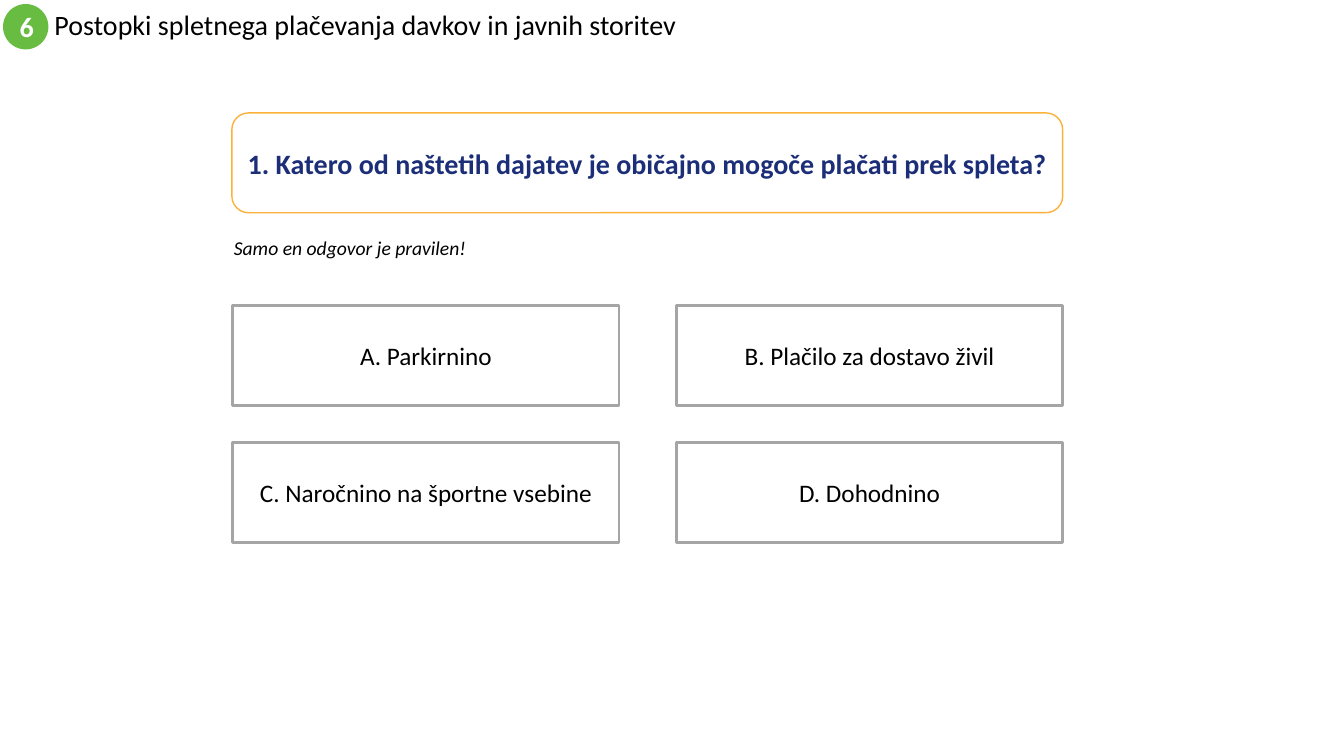
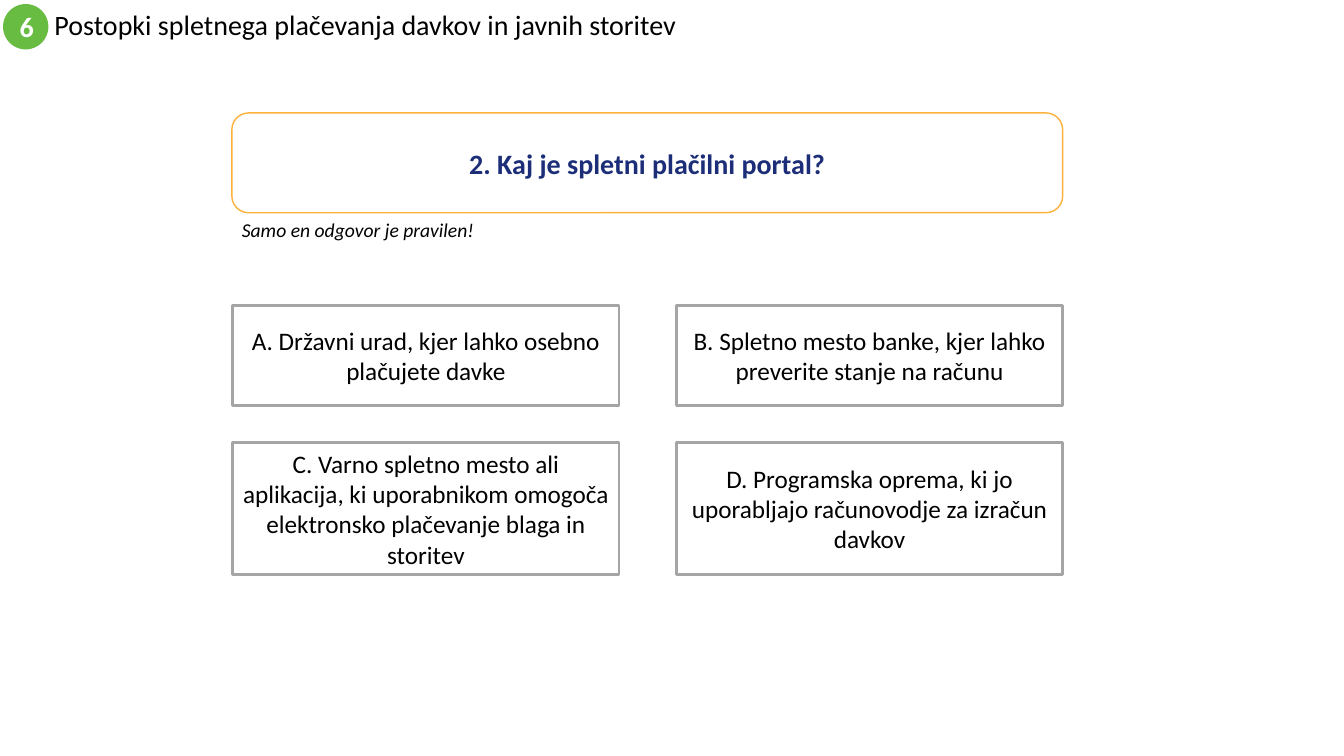
from dataclasses import dataclass

from pptx import Presentation
from pptx.dml.color import RGBColor
from pptx.enum.shapes import MSO_SHAPE
from pptx.enum.text import MSO_ANCHOR, MSO_AUTO_SIZE, PP_ALIGN
from pptx.shapes.autoshape import Shape
from pptx.slide import Slide, SlideLayout
from pptx.util import Inches, Pt

COLORS = {
    "black": "000000",
    "white": "FFFFFF",
    "green": "68BC42",
    "amber": "FCB13A",
    "navy": "1C2E78",
    "gray": "A5A5A5",
}
FONT = "Calibri"
HEADER = "Postopki spletnega plačevanja davkov in javnih storitev"
UNIT = "6"
NOTE = "Samo en odgovor je pravilen!"

COLS = (2.31, 6.71)
ROWS = (3.03, 4.39)
WIDTH = 3.83
HEIGHT = 0.99


@dataclass(frozen=True)
class Box:
    left: float
    top: float
    width: float
    height: float


@dataclass(frozen=True)
class Quiz:
    question: str
    answers: tuple[str, ...]  # A, B, C, D: row by row
    note: Box
    last: float = HEIGHT  # height of the bottom row


QUIZZES = (
    Quiz(
        "1. Katero od naštetih dajatev je običajno mogoče plačati prek spleta?",
        (
            "A. Parkirnino",
            "B. Plačilo za dostavo živil",
            "C. Naročnino na športne vsebine",
            "D. Dohodnino",
        ),
        Box(2.22, 2.29, 4.75, 0.34),
    ),
    Quiz(
        "2. Kaj je spletni plačilni portal?",
        (
            "A. Državni urad, kjer lahko osebno plačujete davke",
            "B. Spletno mesto banke, kjer lahko preverite stanje na računu",
            "C. Varno spletno mesto ali aplikacija, ki uporabnikom omogoča "
            "elektronsko plačevanje blaga in storitev",
            "D. Programska oprema, ki jo uporabljajo računovodje za izračun davkov",
        ),
        Box(2.3, 2.11, 2.73, 0.34),
        last=1.31,
    ),
)


def color(name: str) -> RGBColor:
    return RGBColor.from_string(COLORS[name])


def place(box: Box) -> tuple[int, int, int, int]:
    """Give the box as left, top, width and height for python-pptx."""
    return (Inches(box.left), Inches(box.top),
            Inches(box.width), Inches(box.height))


def write(shape: Shape, text: str, *, size: int = 18, ink: str = "black",
          bold: bool = False, italic: bool = False,
          align: PP_ALIGN = PP_ALIGN.CENTER,
          anchor: MSO_ANCHOR = MSO_ANCHOR.MIDDLE,
          spacing: float = 1.0) -> None:
    frame = shape.text_frame
    frame.word_wrap = True
    frame.auto_size = MSO_AUTO_SIZE.NONE
    frame.vertical_anchor = anchor
    frame.text = text
    para = frame.paragraphs[0]
    para.alignment = align
    para.line_spacing = spacing
    font = para.runs[0].font
    font.name = FONT
    font.size = Pt(size)
    font.bold = bold
    font.italic = italic
    font.color.rgb = color(ink)


def draw(slide: Slide, kind: MSO_SHAPE, box: Box, *, fill: str = "white",
         line: str | None = None, weight: float = 1) -> Shape:
    shape = slide.shapes.add_shape(kind, *place(box))
    shape.shadow.inherit = False
    shape.fill.solid()
    shape.fill.fore_color.rgb = color(fill)
    if line:
        shape.line.color.rgb = color(line)
        shape.line.width = Pt(weight)
    else:
        shape.line.fill.background()
    return shape


def head(slide: Slide) -> None:
    """Set the title and the unit badge that every slide carries."""
    title = slide.shapes.title
    title.left, title.top, title.width, title.height = place(
        Box(0.44, 0.04, 8, 0.45))
    write(title, HEADER, size=20, align=PP_ALIGN.LEFT, spacing=0.9)
    badge = draw(slide, MSO_SHAPE.OVAL, Box(0.03, 0.04, 0.45, 0.45),
                 fill="green")
    write(badge, UNIT, size=20, ink="white", bold=True)


def build(deck: Presentation, layout: SlideLayout, quiz: Quiz) -> None:
    slide = deck.slides.add_slide(layout)
    head(slide)

    panel = draw(slide, MSO_SHAPE.ROUNDED_RECTANGLE,
                 Box(2.3, 1.12, 8.24, HEIGHT), line="amber")
    write(panel, quiz.question, size=20, ink="navy", bold=True)

    note = slide.shapes.add_textbox(*place(quiz.note))
    write(note, NOTE, size=14, italic=True, align=PP_ALIGN.LEFT,
          anchor=MSO_ANCHOR.TOP)

    for index, answer in enumerate(quiz.answers):
        row, col = divmod(index, len(COLS))
        height = quiz.last if row else HEIGHT
        card = draw(slide, MSO_SHAPE.RECTANGLE,
                    Box(COLS[col], ROWS[row], WIDTH, height),
                    line="gray", weight=2)
        write(card, answer)


def main() -> None:
    deck = Presentation()
    deck.slide_width = Inches(13.33)
    deck.slide_height = Inches(7.5)
    layout = deck.slide_layouts.get_by_name("Title Only")
    for quiz in QUIZZES:
        build(deck, layout, quiz)
    deck.save("out.pptx")


if __name__ == "__main__":
    main()
